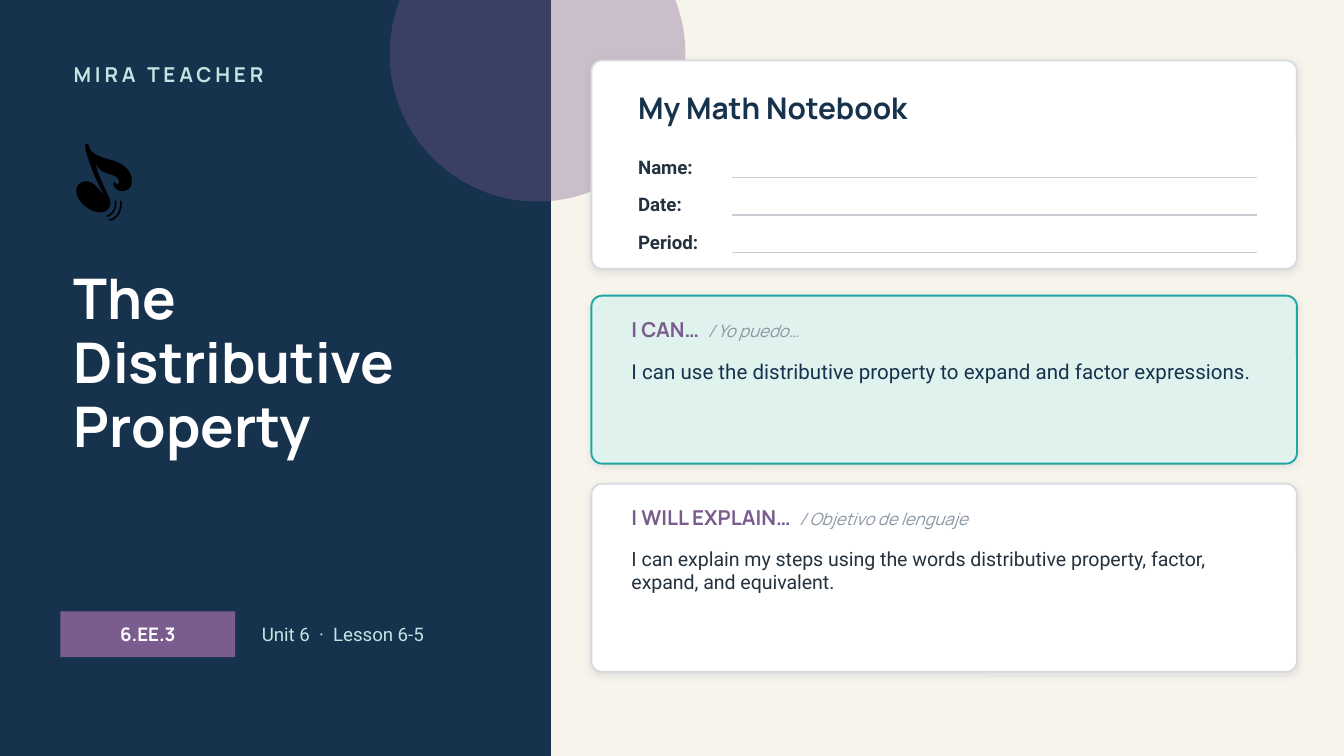
from lxml.etree import SubElement
from pptx import Presentation
from pptx.dml.color import RGBColor
from pptx.enum.shapes import MSO_CONNECTOR, MSO_SHAPE
from pptx.enum.text import MSO_ANCHOR, MSO_AUTO_SIZE, PP_ALIGN
from pptx.oxml.ns import qn
from pptx.util import Inches, Pt

THEME = {
    "navy": "17324D", "purple": "7A5C8E", "cream": "F7F4EC", "white": "FFFFFF",
    "teal": "1FA6A2", "mint": "DFF2EE", "border": "D6DBDF", "rule": "C7CDD2",
    "shadow": "1C2E42",
    "brand": dict(name="Manrope", size=11, color="BFE6E2", bold=True, spc=2),
    "icon": dict(name="Calibri", size=44, color="000000"),
    "title": dict(name="Manrope", size=30, color="FFFFFF", bold=True),
    "badge": dict(name="Manrope", size=10, color="FFFFFF", bold=True),
    "lesson": dict(name="Roboto", size=10, color="BFE6E2"),
    "gap": dict(name="Roboto", size=10, color="BFE6E2", spc=2.5),
    "heading": dict(name="Manrope", size=16, color="17324D", bold=True),
    "field": dict(name="Roboto", size=10, color="24323F", bold=True),
    "label": dict(name="Manrope", size=11, color="7A5C8E", bold=True),
    "label gap": dict(name="Manrope", size=11, color="7A5C8E", bold=True, spc=2.3),
    "spanish": dict(name="Manrope", size=9, color="8A96A3", italic=True),
    "goal": dict(name="Roboto", size=11, color="17324D"),
    "language": dict(name="Roboto", size=10.5, color="24323F"),
}

SLIDE_WIDTH = 10
SLIDE_HEIGHT = SLIDE_WIDTH * 9 / 16
TITLE = "The Distributive Property"
SIDE_TEXTS = [
    ((0.45, 0.4, 3.3, 0.3), [("MIRA TEACHER", "brand")]),
    ((0.45, 0.85, 1.5, 0.9), [("🎵", "icon")]),
    ((1.85, 4.55, 2.1, 0.34),
     [("Unit 6", "lesson"), (" ", "gap"), ("·", "lesson"), (" ", "gap"),
      ("Lesson 6-5", "lesson")]),
]
STANDARD = "6.EE.3"
NOTEBOOK = "My Math Notebook"
FIELDS = ["Name:", "Date:", "Period:"]
OBJECTIVES = [
    dict(top=2.2, height=1.25, fill="mint", line="teal", label="I CAN…",
         spanish="/ Yo puedo…", style="goal",
         text="I can use the distributive property to expand and factor expressions."),
    dict(top=3.6, height=1.4, fill="white", line="border", label="I WILL EXPLAIN…",
         spanish="/ Objetivo de lenguaje", style="language",
         text="I can explain my steps using the words distributive property, factor, "
              "expand, and equivalent."),
]
CARD_LEFT, CARD_WIDTH, CARD_RADIUS = 4.4, 5.25, 0.08
FIELD_TOP, FIELD_STEP = 1.12, 0.28


def rgb(name):
    return RGBColor.from_string(THEME.get(name, name))


def write(sp, runs, anchor=MSO_ANCHOR.MIDDLE, align=PP_ALIGN.LEFT):
    tf = sp.text_frame
    for key, value in dict(word_wrap=True, auto_size=MSO_AUTO_SIZE.NONE,
                           vertical_anchor=anchor).items():
        setattr(tf, key, value)
    p = tf.paragraphs[0]
    p.alignment = align
    for text, style in runs:
        r = p.add_run()
        r.text = text
        for key, value in THEME[style].items():
            if key == "color":
                r.font.color.rgb = rgb(value)
            elif key == "spc":
                r.font._element.set("spc", str(round(value * 100)))
            else:
                setattr(r.font, key, Pt(value) if key == "size" else value)
    return p


def add_text(s, box, runs, anchor=MSO_ANCHOR.MIDDLE):
    return write(s.shapes.add_textbox(*map(Inches, box)), runs, anchor)


def add_block(s, kind, box, fill, line=None):
    sp = s.shapes.add_shape(kind, *map(Inches, box))
    sp.shadow.inherit = False
    sp.fill.solid()
    sp.fill.fore_color.rgb = rgb(fill)
    if line:
        sp.line.color.rgb = rgb(line)
        sp.line.width = Pt(1)
    else:
        sp.line.fill.background()
    return sp


def add_alpha(color, percent):
    SubElement(color, qn("a:alpha"), val=str(percent * 1000))


def add_card(s, top, height, fill, line):
    sp = add_block(s, MSO_SHAPE.ROUNDED_RECTANGLE,
                   (CARD_LEFT, top, CARD_WIDTH, height), fill, line)
    sp.adjustments[0] = CARD_RADIUS / height
    effects = sp._element.spPr.find(qn("a:effectLst"))
    shadow = SubElement(effects, qn("a:outerShdw"), blurRad=str(Pt(4)), dist=str(Pt(1)),
                        dir="5400000", algn="bl", rotWithShape="0")
    add_alpha(SubElement(shadow, qn("a:srgbClr"), val=THEME["shadow"]), 10)


def add_rule(s, left, right, y):
    line = s.shapes.add_connector(MSO_CONNECTOR.STRAIGHT,
                                  *map(Inches, (left, y, right, y)))
    line.line.color.rgb = rgb("rule")
    line.line.width = Pt(0.75)
    SubElement(line._element.spPr, qn("a:effectLst"))


def build_side(s):
    add_block(s, MSO_SHAPE.RECTANGLE, (0, 0, 4.1, SLIDE_HEIGHT), "navy")
    circle = add_block(s, MSO_SHAPE.OVAL, (2.9, -0.7, 2.2, 2.2), "purple")
    add_alpha(circle._element.spPr.find(qn("a:solidFill"))[0], 35)
    for box, runs in SIDE_TEXTS:
        add_text(s, box, runs)
    title = s.shapes.title
    for key, value in dict(left=0.45, top=1.95, width=3.3, height=1.7).items():
        setattr(title, key, Inches(value))
    write(title, [(TITLE, "title")], MSO_ANCHOR.TOP).line_spacing = 0.95
    s.shapes._spTree.append(title._element)
    badge = add_block(s, MSO_SHAPE.RECTANGLE, (0.45, 4.55, 1.3, 0.34), "purple")
    write(badge, [(STANDARD, "badge")], align=PP_ALIGN.CENTER)


def build_notebook(s):
    add_card(s, 0.45, 1.55, "white", "border")
    add_text(s, (4.65, 0.6, 4.8, 0.4), [(NOTEBOOK, "heading")])
    for i, field in enumerate(FIELDS):
        top = FIELD_TOP + i * FIELD_STEP
        add_text(s, (4.65, top, 0.8, 0.24), [(field, "field")])
        add_rule(s, 5.45, 9.35, top + 0.2)


def build_objective(s, item):
    top, height = item["top"], item["height"]
    left, width = CARD_LEFT + 0.2, CARD_WIDTH - 0.4
    add_card(s, top, height, item["fill"], item["line"])
    add_text(s, (left, top + 0.1, width, 0.3),
             [(item["label"], "label"), (" ", "label gap"), (item["spanish"], "spanish")])
    add_text(s, (left, top + 0.42, width, height - 0.48),
             [(item["text"], item["style"])], MSO_ANCHOR.TOP)


def main():
    prs = Presentation()
    prs.slide_width, prs.slide_height = Inches(SLIDE_WIDTH), Inches(SLIDE_HEIGHT)
    s = prs.slides.add_slide(prs.slide_layouts[5])
    s.background.fill.solid()
    s.background.fill.fore_color.rgb = rgb("cream")
    build_side(s)
    build_notebook(s)
    for item in OBJECTIVES:
        build_objective(s, item)
    prs.save("out.pptx")


if __name__ == "__main__":
    main()
